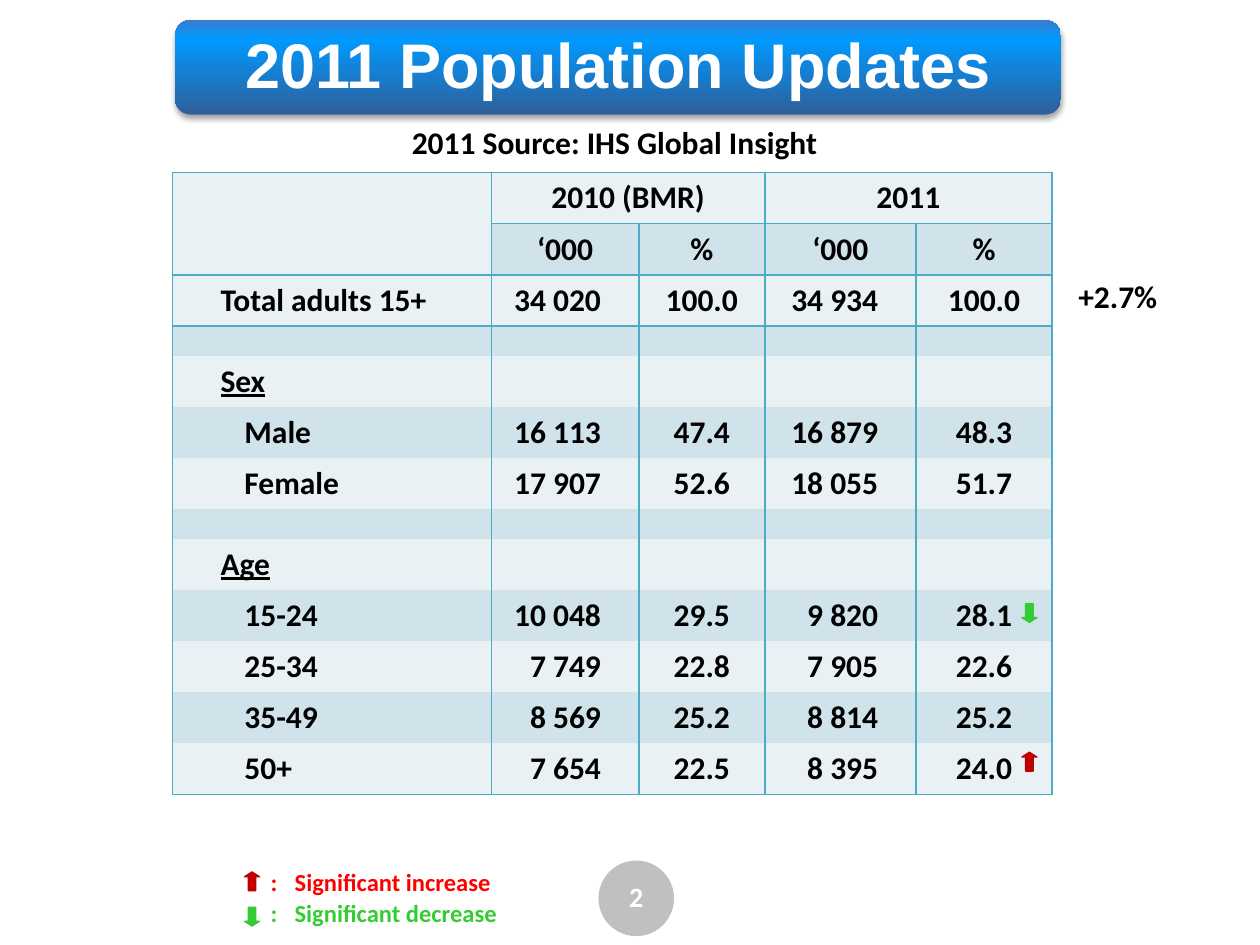
from dataclasses import dataclass

from lxml import etree
from pptx import Presentation
from pptx import util as u
from pptx.dml.color import RGBColor
from pptx.enum import shapes, text
from pptx.oxml import ns

IN = u.Inches
KIND = shapes.MSO_SHAPE
ALIGN = text.PP_ALIGN
PALE, TINT, EDGE = "E9F1F5", "D0E3EA", "4BACC6"
RED, GREEN = "C00000", "33CC33"
COLS = (0.28, 2.25, 1.17, 1, 1.2, 1.08)
TALL, SLIM = 0.4, 0.23
BODY = [
    ("Total adults 15+", "34 020", "100.0", "34 934", "100.0"),
    (),
    ("Sex",),
    ("Male", "16 113", "47.4", "16 879", "48.3"),
    ("Female", "17 907", "52.6", "18 055", "51.7"),
    (),
    ("Age",),
    ("15-24", "10 048", "29.5", "9 820", "28.1"),
    ("25-34", "7 749", "22.8", "7 905", "22.6"),
    ("35-49", "8 569", "25.2", "8 814", "25.2"),
    ("50+", "7 654", "22.5", "8 395", "24.0"),
]


@dataclass
class Box:
    x: float
    y: float
    w: float
    h: float

    def emu(self) -> list:
        return [IN(v) for v in (self.x, self.y, self.w, self.h)]


@dataclass
class Label:
    words: str
    box: Box
    size: int = 18
    color: str = "000000"
    align: object = ALIGN.LEFT
    wrap: bool = True
    tab: float = 0


@dataclass
class Mark:
    x: float
    y: float
    up: bool


LABELS = [
    Label("2", Box(4.75, 6.93, 0.6, 0.37), 16, "FFFFFF", ALIGN.CENTER),
    Label("+2.7%", Box(8.46, 2.15, 0.84, 0.4), wrap=False),
    Label("2011 Source: IHS Global Insight", Box(3.17, 0.93, 3.43, 0.4)),
    Label(":\tSignificant increase", Box(2.05, 6.83, 2.28, 0.34), 14, "FF0000", tab=0.19),
    Label(":\tSignificant decrease", Box(2.05, 7.08, 2.43, 0.34), 14, GREEN, tab=0.19),
]
MARKS = [Mark(8.11, 5.97, True), Mark(8.11, 4.79, False),
         Mark(1.94, 6.92, True), Mark(1.94, 7.2, False)]


def rgb(code: str) -> RGBColor:
    return RGBColor.from_string(code)


def node(xml: str):
    """Turn a snippet with the a: prefix into an element."""
    return etree.fromstring(xml.replace(">", f' xmlns:a="{ns.nsuri("a")}">', 1))


def write(para, words: str, size: int = 18, color: str = "000000", **extra) -> None:
    run = para.add_run()
    run.text = words
    form = {"name": "Calibri", "size": u.Pt(size), "bold": True, **extra}
    for key, value in form.items():
        setattr(run.font, key, value)
    run.font.color.rgb = rgb(color)


def add_label(slide, item: Label) -> None:
    frame = slide.shapes.add_textbox(*item.box.emu()).text_frame
    frame.word_wrap = item.wrap
    frame.auto_size = text.MSO_AUTO_SIZE.SHAPE_TO_FIT_TEXT
    para = frame.paragraphs[0]
    if item.tab:
        para._p.get_or_add_pPr().append(node(
            f'<a:tabLst><a:tab pos="{IN(item.tab)}" algn="l"/></a:tabLst>'))
    para.alignment = item.align
    write(para, item.words, item.size, item.color)


def add_shape(slide, kind, box: Box, color: str):
    shape = slide.shapes.add_shape(kind, *box.emu())
    shape.shadow.inherit = False
    shape.fill.solid()
    shape.fill.fore_color.rgb = rgb(color)
    shape.line.fill.background()
    return shape


def add_mark(slide, item: Mark) -> None:
    kind, color = (KIND.UP_ARROW, RED) if item.up else (KIND.DOWN_ARROW, GREEN)
    shape = add_shape(slide, kind, Box(item.x, item.y, 0.12, 0.15), color)
    shape.adjustments[0], shape.adjustments[1] = 0.5, 0.32
    shape.line.color.rgb = rgb(color)
    shape.line.width = u.Pt(0.75)


def add_title(slide) -> None:
    shape = add_shape(slide, KIND.ROUNDED_RECTANGLE, Box(1.39, 0.16, 7.03, 0.75), "0099FF")
    props = shape._element.spPr
    stops = "".join(
        f'<a:gs pos="{pos * 1000}"><a:srgbClr val="{code}"/></a:gs>'
        for pos, code in ((0, "2F5F99"), (80, "0099FF"), (100, "3A7CCB")))
    props.replace(props.find(ns.qn("a:solidFill")), node(
        f'<a:gradFill><a:gsLst>{stops}</a:gsLst><a:lin ang="16200000" scaled="0"/></a:gradFill>'))
    props.find(ns.qn("a:effectLst")).append(node(
        f'<a:outerShdw blurRad="{u.Pt(3.1)}" dist="{u.Pt(1.8)}" dir="5400000" rotWithShape="0">'
        '<a:srgbClr val="000000"><a:alpha val="35000"/></a:srgbClr></a:outerShdw>'))
    shape.text_frame.vertical_anchor = text.MSO_ANCHOR.MIDDLE
    para = shape.text_frame.paragraphs[0]
    para.alignment, para.line_spacing = ALIGN.CENTER, 0.95
    write(para, "2011 Population Updates", 36, "FFFFFF", name="Arial")


def paint(cell, color: str, sides: str) -> None:
    """Fill a cell and rule the named sides (letters of LRTB)."""
    cell.fill.solid()
    cell.fill.fore_color.rgb = rgb(color)
    props = cell._tc.get_or_add_tcPr()
    for spot, side in enumerate(s for s in "LRTB" if s in sides):
        props.insert(spot, node(
            f'<a:ln{side} w="{u.Pt(1)}"><a:solidFill><a:srgbClr val="{EDGE}"/>'
            f'</a:solidFill></a:ln{side}>'))


def fill_row(grid, row: int, data: tuple) -> None:
    for col, words in enumerate(data, 1):
        cell = grid.cell(row, col)
        para = cell.text_frame.paragraphs[0]
        if col == 1:
            if len(data) > 1 and row > 2:
                para._p.get_or_add_pPr().set("marL", str(IN(0.19)))
            write(para, words, underline=len(data) == 1)
            continue
        para.alignment = ALIGN.CENTER if col % 2 else ALIGN.RIGHT
        if col % 2 == 0:
            cell.margin_right = IN(0.3)
        write(para, words)


def add_grid(slide) -> None:
    count = len(BODY) + 2
    box = Box(1.37, 1.37, sum(COLS), 4.87)
    grid = slide.shapes.add_table(count, len(COLS), *box.emu()).table
    grid.first_row = grid.horz_banding = False
    style = grid._tbl.tblPr.find(ns.qn("a:tableStyleId"))
    style.text = "{2D5ABB26-0587-4C30-8999-92F81FD0307C}"
    for col, wide in zip(grid.columns, COLS):
        col.width = IN(wide)
    for row, line in enumerate(grid.rows):
        slim = row > 1 and not BODY[row - 2]
        line.height = IN(SLIM if slim else TALL)
        for col, cell in enumerate(line.cells):
            sides = {0: "L", 1: "R"}.get(col, "LR")
            sides += "TB" if row < 2 else "T" if row == 2 else "B" if row == count - 1 else ""
            paint(cell, TINT if row % 2 and (row > 1 or col > 1) else PALE, sides)
            if slim:
                cell.text_frame.paragraphs[0]._p.append(node('<a:endParaRPr sz="800"></a:endParaRPr>'))
    grid.cell(0, 0).merge(grid.cell(1, 1))
    heads = [(0, 2, "2010 (BMR)"), (0, 4, "2011")]
    heads += [(1, col, "%" if col % 2 else "‘000") for col in range(2, 6)]
    for row, col, words in heads:
        if row == 0:
            grid.cell(0, col).merge(grid.cell(0, col + 1))
        para = grid.cell(row, col).text_frame.paragraphs[0]
        para.alignment = ALIGN.CENTER
        write(para, words)
    for row, data in enumerate(BODY, 2):
        fill_row(grid, row, data)


def main() -> None:
    deck = Presentation()
    deck.slide_width, deck.slide_height = IN(10), IN(7.5)
    slide = deck.slides.add_slide(deck.slide_layouts[6])
    add_shape(slide, KIND.OVAL, Box(4.75, 6.83, 0.6, 0.6), "C0C0C0")
    add_grid(slide)
    add_title(slide)
    for item in LABELS:
        add_label(slide, item)
    for item in MARKS:
        add_mark(slide, item)
    deck.save("out.pptx")


if __name__ == "__main__":
    main()
